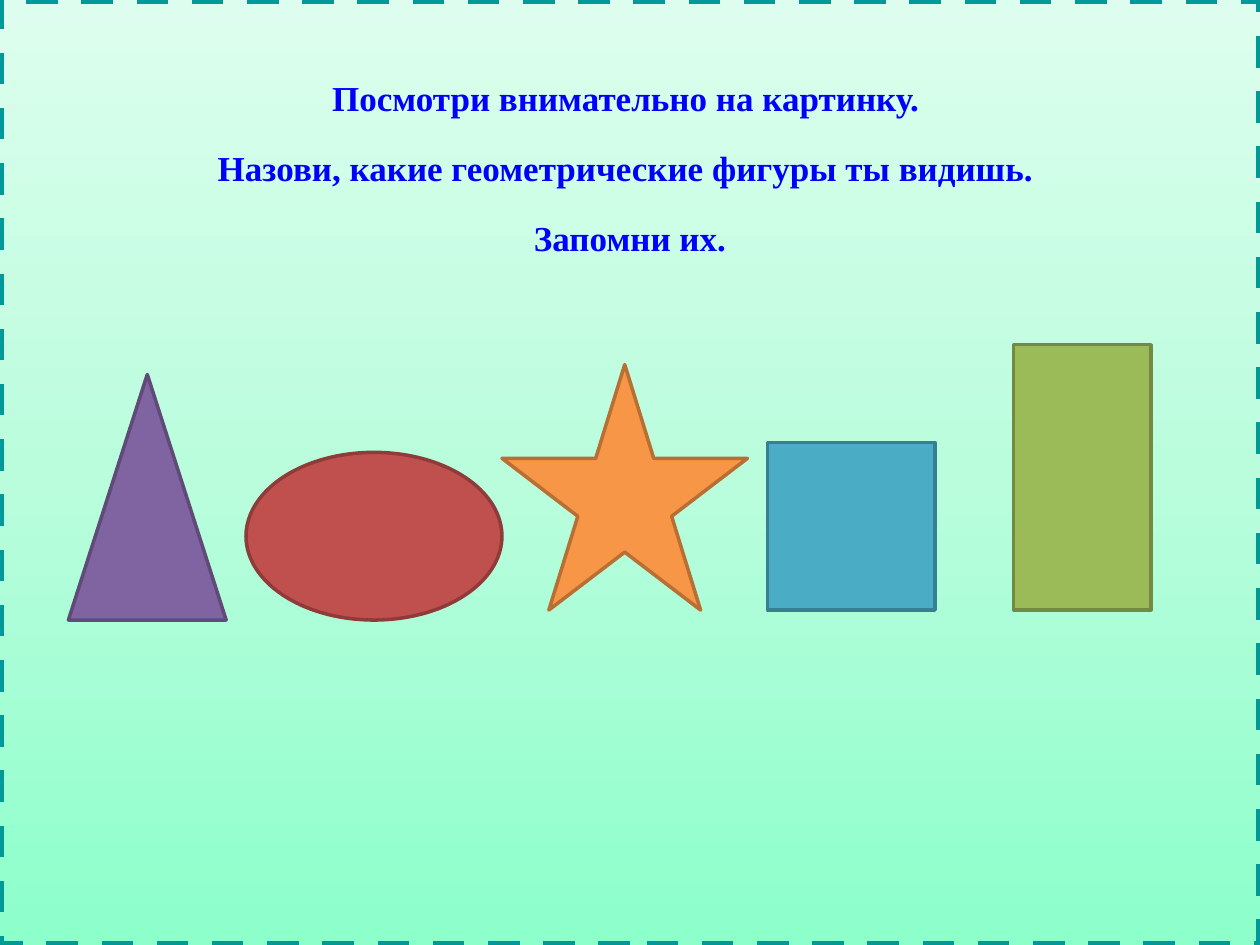
from copy import deepcopy

from pptx import Presentation
from pptx.dml.color import RGBColor
from pptx.enum.dml import MSO_LINE
from pptx.enum.shapes import MSO_SHAPE
from pptx.enum.text import MSO_ANCHOR, PP_ALIGN
from pptx.util import Cm, Pt

COLORS = {
    "text": "0000FF",
    "border": "009999",
    "panel_bottom": "8CFFCB",
    "panel_middle": "BAFDDD",
    "panel_top": "DDFEEE",
    "violet": "8064A2",
    "violet_line": "5F4A78",
    "red": "C0504D",
    "red_line": "8E3B39",
    "orange": "F79646",
    "orange_line": "B76F34",
    "blue": "4BACC6",
    "blue_line": "377F92",
    "green": "9BBB59",
    "green_line": "738A42",
}
LINES = [
    "Посмотри внимательно на картинку. ",
    "Назови, какие геометрические фигуры ты видишь. ",
    "Запомни их.",
]
FIGURES = [
    (MSO_SHAPE.ISOSCELES_TRIANGLE, "violet", 0, 0, 3.18, 4.95),
    (MSO_SHAPE.OVAL, "red", 3.58, 0, 5.16, 3.38),
    (MSO_SHAPE.STAR_5_POINT, "orange", 8.74, 0.2, 4.95, 4.95),
    (MSO_SHAPE.RECTANGLE, "blue", 14.09, 0.2, 3.38, 3.38),
    (MSO_SHAPE.RECTANGLE, "green", 19.05, 0.2, 2.77, 5.35),
]


def color(name):
    """Return the named colour."""
    return RGBColor.from_string(COLORS[name])


def add_figure(page, kind, left, top, width, height, line, weight):
    """Add an outlined preset shape without shadow."""
    shape = page.shapes.add_shape(kind, Cm(left), Cm(top), Cm(width), Cm(height))
    shape.shadow.inherit = False
    shape.line.color.rgb = color(line)
    shape.line.width = Pt(weight)
    return shape


def fill_gradient(shape, names, angle):
    """Fill a shape with three evenly spaced gradient stops."""
    shape.fill.gradient()
    shape.fill.gradient_angle = angle
    first = shape.fill._fill._gradFill.gsLst[0]
    first.addnext(deepcopy(first))
    for index, (stop, name) in enumerate(zip(shape.fill.gradient_stops, names)):
        stop.position = index / 2
        stop.color.rgb = color(name)


def write_line(para, text, size=20, font="Times New Roman", bold=True, ink="text", before=0):
    """Write one centred, formatted line of text."""
    para.alignment = PP_ALIGN.CENTER
    para.line_spacing = 1.5
    para.space_before = Pt(before)
    span = para.add_run()
    span.text = text
    span.font.size = Pt(size)
    span.font.name = font
    span.font.bold = bold
    span.font.color.rgb = color(ink)


def add_panel(page, left, top, width, height):
    """Add the dashed gradient panel with the task text."""
    box = add_figure(page, MSO_SHAPE.RECTANGLE, left, top, width, height, "border", 4.5)
    box.line.dash_style = MSO_LINE.DASH
    fill_gradient(box, ["panel_bottom", "panel_middle", "panel_top"], 90)
    frame = box.text_frame
    frame.word_wrap = True
    frame.vertical_anchor = MSO_ANCHOR.TOP
    frame.margin_top = Cm(1.12)
    for index, text in enumerate(LINES):
        para = frame.add_paragraph() if index else frame.paragraphs[0]
        write_line(para, text, before=4 if index else 0)


def add_figure_row(page, left, bottom):
    """Add the row of figures, each lifted from the bottom of the row."""
    for kind, name, offset, lift, width, height in FIGURES:
        top = bottom - lift - height
        figure = add_figure(page, kind, left + offset, top, width, height, f"{name}_line", 2)
        figure.fill.solid()
        figure.fill.fore_color.rgb = color(name)


def main():
    """Build and save the deck."""
    deck = Presentation()
    deck.slide_width, deck.slide_height = Cm(25.4), Cm(19.05)
    page = deck.slides.add_slide(deck.slide_layouts[6])
    add_panel(page, 0, 0, 25.4, 19.05)
    add_figure_row(page, 1.38, 12.5)
    deck.save("out.pptx")


if __name__ == "__main__":
    main()
